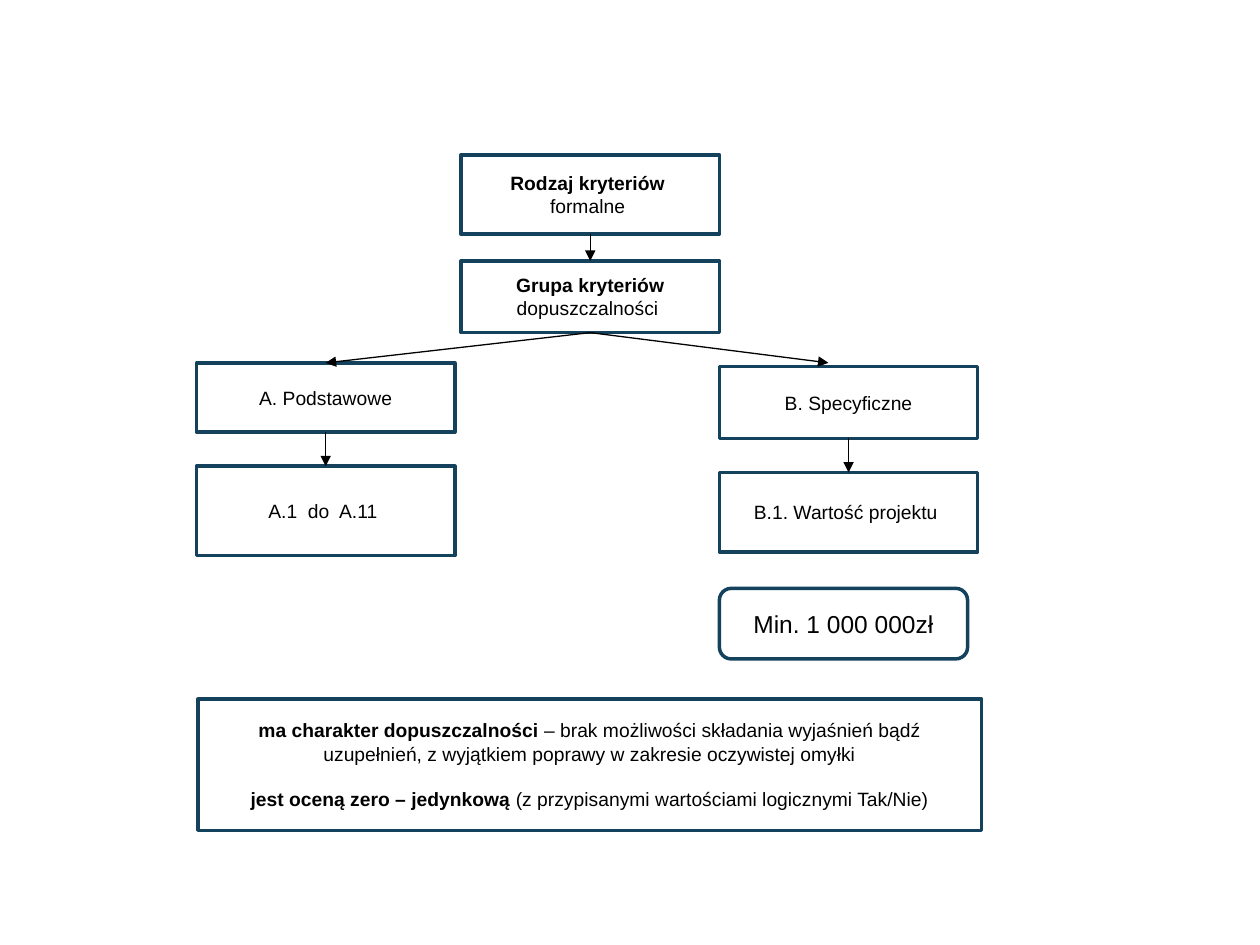
from lxml.etree import SubElement
from pptx import Presentation
from pptx.dml.color import RGBColor
from pptx.enum.shapes import MSO_CONNECTOR, MSO_SHAPE
from pptx.enum.text import MSO_ANCHOR, PP_ALIGN
from pptx.oxml.ns import qn
from pptx.util import Inches, Pt

NAVY = RGBColor(0x14, 0x42, 0x5D)
WHITE = RGBColor(0xFF, 0xFF, 0xFF)
BLACK = RGBColor(0x00, 0x00, 0x00)

# Column edges and the common box width, in inches
LEFT, CENTER, RIGHT = 1.56, 3.66, 5.71
BOX_WIDTH = 2.05

# Connection sites of a rectangle
TOP, BOTTOM = 0, 2


def add_box(slide, left, top, width, height, paragraphs,
            kind=MSO_SHAPE.RECTANGLE, size=11, gap=0):
    """Each paragraph is a (bold text, regular text) pair."""
    shape = slide.shapes.add_shape(
        kind, Inches(left), Inches(top), Inches(width), Inches(height))
    shape.shadow.inherit = False
    shape.fill.solid()
    shape.fill.fore_color.rgb = WHITE
    shape.line.color.rgb = NAVY
    shape.line.width = Pt(2)
    frame = shape.text_frame
    frame.word_wrap = True
    frame.vertical_anchor = MSO_ANCHOR.MIDDLE
    for index, texts in enumerate(paragraphs):
        paragraph = frame.add_paragraph() if index else frame.paragraphs[0]
        paragraph.alignment = PP_ALIGN.CENTER
        if index and gap:
            paragraph.space_before = Pt(gap)
        paragraph.font.name = "Arial"
        paragraph.font.size = Pt(size)
        paragraph.font.color.rgb = BLACK
        for text, bold in zip(texts, (True, False)):
            if text:
                run = paragraph.add_run()
                run.text = text
                run.font.bold = bold
    return shape


def add_arrow(slide, source, target, shift=(0, 0)):
    """Run from the bottom of source to the top of target, shifted in inches."""
    end_x = target.left + target.width // 2 + Inches(shift[0])
    end_y = target.top + Inches(shift[1])
    connector = slide.shapes.add_connector(
        MSO_CONNECTOR.STRAIGHT, source.left + source.width // 2,
        source.top + source.height, end_x, end_y)
    connector.begin_connect(source, BOTTOM)
    if not any(shift):
        connector.end_connect(target, TOP)
    connector.line.color.rgb = BLACK
    connector.line.width = Pt(0.75)
    SubElement(connector.line._get_or_add_ln(), qn("a:tailEnd"), type="triangle")
    SubElement(connector._element.spPr, qn("a:effectLst"))


def main():
    presentation = Presentation()
    presentation.slide_width = Inches(10)
    presentation.slide_height = Inches(7.5)
    slide = presentation.slides.add_slide(presentation.slide_layouts[6])

    criteria_type = add_box(
        slide, CENTER, 1.23, BOX_WIDTH, 0.63,
        [("Rodzaj kryteriów ", ""), ("", "formalne ")])
    criteria_group = add_box(
        slide, CENTER, 2.07, BOX_WIDTH, 0.57,
        [("Grupa kryteriów", ""), ("", "dopuszczalności ")])
    basic = add_box(
        slide, LEFT, 2.88, BOX_WIDTH, 0.55, [("", "A. Podstawowe")])
    basic_list = add_box(
        slide, LEFT, 3.7, BOX_WIDTH, 0.71, [("", "A.1  do  A.11 ")])
    specific = add_box(
        slide, RIGHT, 2.91, BOX_WIDTH, 0.57, [("", "B. Specyficzne")])
    project_value = add_box(
        slide, RIGHT, 3.75, BOX_WIDTH, 0.63, [("", "B.1. Wartość projektu ")])
    add_box(slide, RIGHT, 4.67, 1.97, 0.56, [("", "Min. 1 000 000zł")],
            MSO_SHAPE.ROUNDED_RECTANGLE, size=14)
    add_box(slide, LEFT + 0.01, 5.55, 6.22, 1.04, [
        ("ma charakter dopuszczalności ",
         "– brak możliwości składania wyjaśnień bądź uzupełnień, "
         "z wyjątkiem poprawy w zakresie oczywistej omyłki"),
        ("jest oceną zero – jedynkową ",
         "(z przypisanymi wartościami logicznymi Tak/Nie)"),
    ], gap=13)

    add_arrow(slide, criteria_type, criteria_group)
    add_arrow(slide, criteria_group, basic)
    add_arrow(slide, criteria_group, specific, shift=(-0.16, -0.03))
    add_arrow(slide, basic, basic_list)
    add_arrow(slide, specific, project_value)

    presentation.save("out.pptx")


if __name__ == "__main__":
    main()
